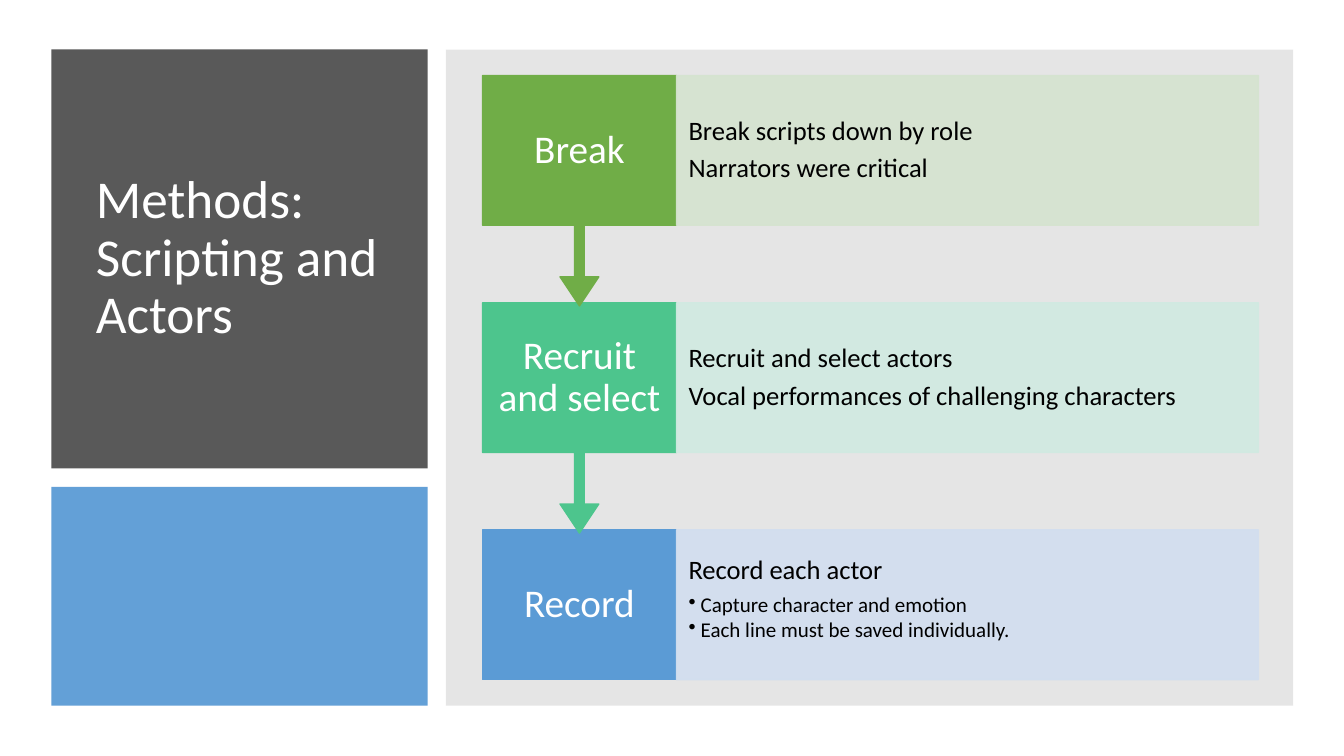
"""Build the slide on scripting and actors, with lengths as percentages of the slide's size."""
from dataclasses import dataclass

from lxml.etree import SubElement
from pptx import Presentation
from pptx.dml.color import RGBColor
from pptx.enum.shapes import MSO_SHAPE
from pptx.enum.text import MSO_ANCHOR, MSO_AUTO_SIZE, PP_ALIGN
from pptx.oxml.ns import qn
from pptx.shapes.autoshape import Shape
from pptx.slide import Slide
from pptx.util import Emu, Inches, Pt

WIDTH, HEIGHT = Inches(13.33), Inches(7.5)
FONT = "Calibri"
COLOURS = {
    "title": "595959", "accent": "5B9BD5", "backdrop": "808080",
    "white": "FFFFFF", "black": "000000",
    "break": "70AD47", "break_pale": "D5E3CF",
    "recruit": "4DC58D", "recruit_pale": "D0EAE1",
    "record": "5B9BD5", "record_pale": "D2DEEF",
}
LABEL_LEFT, LABEL_WIDTH = 35.9, 14.43
DETAIL_WIDTH = 43.3
FIRST_TOP, ROW_HEIGHT, ROW_PITCH = 10, 19.8, 30.05
CALLOUT_HEIGHT = 30.46
CALLOUT_ADJUSTMENTS = (0.05, 0.1, 0.15, 0.65)


@dataclass(frozen=True)
class Area:
    left: float
    top: float
    width: float
    height: float


@dataclass(frozen=True)
class Step:
    label: str
    colour: str
    lines: tuple[str, ...]
    bullets: tuple[str, ...] = ()


TITLE_PANEL = Area(3.83, 6.55, 28, 55.4)
TITLE_TEXT = Area(6.38, 10.67, 23.33, 47.2)
ACCENT_PANEL = Area(3.83, 64.4, 28, 28.95)
BACKDROP = Area(33.17, 6.55, 63.05, 86.8)
STEPS = (
    Step("Break", "break", ("Break scripts down by role", "Narrators were critical")),
    Step("Recruit and select", "recruit",
         ("Recruit and select actors", "Vocal performances of challenging characters")),
    Step("Record", "record", ("Record each actor",),
         ("Capture character and emotion", "Each line must be saved individually.")),
)


def across(share: float) -> Emu:
    return Emu(round(WIDTH * share / 100))


def down(share: float) -> Emu:
    return Emu(round(HEIGHT * share / 100))


def colour(name: str) -> RGBColor:
    return RGBColor.from_string(COLOURS[name])


def add_panel(page: Slide, area: Area, fill: str, opacity: int = 100, outlined: bool = False,
              kind: MSO_SHAPE = MSO_SHAPE.RECTANGLE) -> Shape:
    panel = page.shapes.add_shape(kind, across(area.left), down(area.top),
                                  across(area.width), down(area.height))
    panel.shadow.inherit = False
    panel.fill.solid()
    panel.fill.fore_color.rgb = colour(fill)
    if outlined:
        panel.line.color.rgb = colour(fill)
        panel.line.width = Pt(1)
    else:
        panel.line.fill.background()
    if opacity < 100:
        for shade in panel.element.spPr.iter(qn("a:srgbClr")):
            SubElement(shade, qn("a:alpha"), val=str(opacity * 1000))
    return panel


def write(box: Shape, lines: tuple[str, ...], size: float, ink: str, after: float = 0,
          align: PP_ALIGN = PP_ALIGN.LEFT, bulleted: bool = False, extend: bool = False) -> None:
    frame = box.text_frame
    for index, line in enumerate(lines):
        para = frame.add_paragraph() if extend or index else frame.paragraphs[0]
        para.text = line
        para.alignment = align
        para.line_spacing = 0.9
        para.space_before = Pt(0)
        para.space_after = Pt(after)
        para.font.name = FONT
        para.font.size = Pt(size)
        para.font.color.rgb = colour(ink)
        if bulleted:
            para.level = 1
            properties = para._p.get_or_add_pPr()
            properties.set("marL", str(Inches(0.12)))
            properties.set("indent", str(-Inches(0.12)))
            SubElement(properties, qn("a:buChar"), char="•")


def set_frame(box: Shape, side: float, edge: float, anchor: MSO_ANCHOR) -> None:
    frame = box.text_frame
    frame.word_wrap = True
    frame.auto_size = MSO_AUTO_SIZE.NONE
    frame.vertical_anchor = anchor
    frame.margin_left = frame.margin_right = across(side)
    frame.margin_top = frame.margin_bottom = down(edge)


def add_title(page: Slide) -> None:
    panel = add_panel(page, TITLE_PANEL, "title")
    title = page.shapes.title
    title.left, title.top = across(TITLE_TEXT.left), down(TITLE_TEXT.top)
    title.width, title.height = across(TITLE_TEXT.width), down(TITLE_TEXT.height)
    set_frame(title, 0.75, 0.67, MSO_ANCHOR.MIDDLE)
    write(title, ("Methods: Scripting and Actors",), 38, "white")
    panel.element.addnext(title.element)


def add_step(page: Slide, row: int, step: Step) -> None:
    top = FIRST_TOP + row * ROW_PITCH
    is_last = row == len(STEPS) - 1
    kind = MSO_SHAPE.RECTANGLE if is_last else MSO_SHAPE.DOWN_ARROW_CALLOUT
    height = ROW_HEIGHT if is_last else CALLOUT_HEIGHT
    label = add_panel(page, Area(LABEL_LEFT, top, LABEL_WIDTH, height), step.colour,
                      outlined=True, kind=kind)
    if not is_last:
        for index, value in enumerate(CALLOUT_ADJUSTMENTS):
            label.adjustments[index] = value
    set_frame(label, 1.05, 2.93, MSO_ANCHOR.MIDDLE)
    write(label, (step.label,), 28, "white", align=PP_ALIGN.CENTER)

    detail = add_panel(page, Area(LABEL_LEFT + LABEL_WIDTH, top, DETAIL_WIDTH, ROW_HEIGHT),
                       f"{step.colour}_pale", opacity=90, outlined=True)
    set_frame(detail, 0.9, 3.47, MSO_ANCHOR.TOP if step.bullets else MSO_ANCHOR.MIDDLE)
    write(detail, step.lines, 19, "black", after=6.5)
    write(detail, step.bullets, 15, "black", after=2.25, bulleted=True, extend=True)


def main() -> None:
    deck = Presentation()
    deck.slide_width, deck.slide_height = WIDTH, HEIGHT
    page = deck.slides.add_slide(deck.slide_layouts.get_by_name("Title Only"))
    add_title(page)
    add_panel(page, ACCENT_PANEL, "accent", opacity=95)
    add_panel(page, BACKDROP, "backdrop", opacity=20)
    for row, step in reversed(list(enumerate(STEPS))):
        add_step(page, row, step)
    deck.save("out.pptx")


if __name__ == "__main__":
    main()
